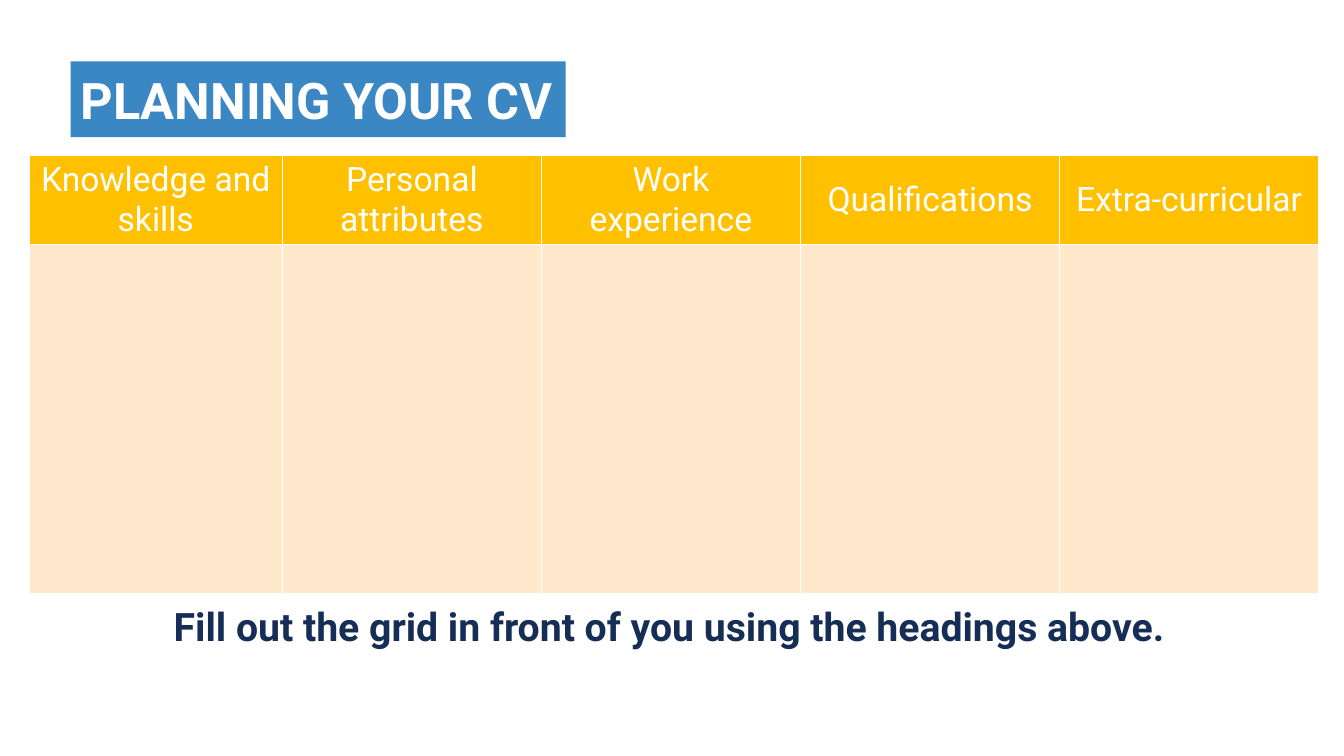
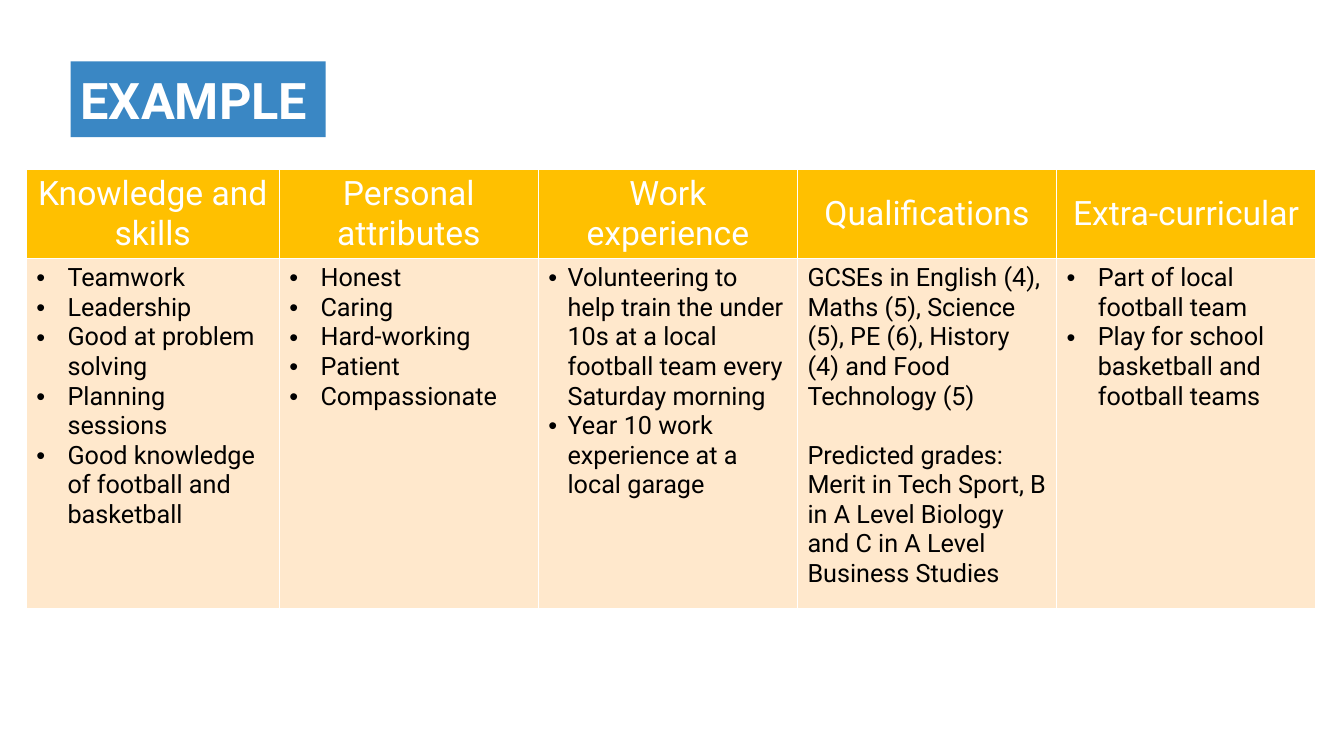
from dataclasses import dataclass

from lxml import etree
from pptx import Presentation
from pptx.dml.color import RGBColor
from pptx.enum.text import MSO_ANCHOR, MSO_AUTO_SIZE, PP_ALIGN
from pptx.oxml.ns import qn
from pptx.util import Inches, Pt

LEFT, CENTER = PP_ALIGN.LEFT, PP_ALIGN.CENTER
TOP, MIDDLE = MSO_ANCHOR.TOP, MSO_ANCHOR.MIDDLE
NO_AUTOFIT = MSO_AUTO_SIZE.NONE
TITLE_ONLY = 5


@dataclass(frozen=True)
class Theme:
    font: str = "Roboto"
    white: str = "FFFFFF"
    black: str = "000000"
    navy: str = "162D56"
    blue: str = "3A87C4"
    amber: str = "FFC000"
    peach: str = "FFE8CC"
    title_size: int = 36
    prompt_size: int = 28
    header_size: int = 24
    body_size: int = 18
    border_width: int = 1


THEME = Theme()
HEADINGS = ["Knowledge and skills", "Personal attributes", "Work experience",
            "Qualifications", "Extra-curricular"]
COLUMN_WIDTHS = [2.51] + [2.57] * 4
ROW_HEIGHTS = [0.87, 3.47]
WIDE_INDENT, NARROW_INDENT = 0.31, 0.19

# Each column: bullet indent in inches (0 for plain paragraphs) and its paragraphs
EXAMPLE_COLUMNS = [
    (WIDE_INDENT, ["Teamwork", "Leadership", "Good at problem solving",
                   "Planning sessions",
                   "Good knowledge of football and basketball"]),
    (WIDE_INDENT, ["Honest", "Caring", "Hard-working", "Patient",
                   "Compassionate"]),
    (NARROW_INDENT, ["Volunteering to help train the under 10s at a local "
                     "football team every Saturday morning",
                     "Year 10 work experience at a local garage"]),
    (0, ["GCSEs in English (4), Maths (5), Science (5), PE (6), History (4) "
         "and Food Technology (5)",
         "Predicted grades: Merit in Tech Sport, B in A Level Biology and "
         "C in A Level Business Studies"]),
    (WIDE_INDENT, ["Part of local football team",
                   "Play for school basketball and football teams"]),
]


def fill_solid(target, color):
    target.fill.solid()
    target.fill.fore_color.rgb = RGBColor.from_string(color)


def format_para(para, size, color, bold=False, align=LEFT):
    para.alignment = align
    for span in para.runs:
        span.font.name = THEME.font
        span.font.size = Pt(size)
        span.font.bold = bold
        span.font.color.rgb = RGBColor.from_string(color)


def add_bullet(para, indent):
    properties = para._p.get_or_add_pPr()
    properties.set("marL", str(Inches(indent)))
    properties.set("indent", str(-Inches(indent)))
    font = etree.SubElement(properties, qn("a:buFont"))
    font.set("typeface", "Arial")
    etree.SubElement(properties, qn("a:buChar")).set("char", "•")


def set_borders(cell):
    properties = cell._tc.get_or_add_tcPr()
    for position, side in enumerate(("lnL", "lnR", "lnT", "lnB")):
        line = etree.Element(qn(f"a:{side}"))
        line.set("w", str(Pt(THEME.border_width)))
        fill = etree.SubElement(line, qn("a:solidFill"))
        etree.SubElement(fill, qn("a:srgbClr")).set("val", THEME.white)
        properties.insert(position, line)


def add_title(page, text, width):
    title = page.shapes.title
    title.left, title.top = Inches(0.7), Inches(0.61)
    title.width, title.height = Inches(width), Inches(0.75)
    fill_solid(title, THEME.blue)
    frame = title.text_frame
    frame.text = text
    frame.auto_size = NO_AUTOFIT
    frame.word_wrap = True
    frame.margin_right = 0
    frame.vertical_anchor = MIDDLE
    format_para(frame.paragraphs[0], THEME.title_size, THEME.white, bold=True)


def fill_body_cell(cell, indent, lines):
    frame = cell.text_frame
    frame.text = "\n".join(lines)
    for index, para in enumerate(frame.paragraphs):
        if indent:
            add_bullet(para, indent)
        elif index:
            para.space_before = Pt(21)
        format_para(para, THEME.body_size, THEME.black)


def add_cv_grid(page, left, top, columns=()):
    """Place the five-column grid; without columns its body stays empty."""
    table = page.shapes.add_table(
        len(ROW_HEIGHTS), len(HEADINGS), Inches(left), Inches(top),
        Inches(sum(COLUMN_WIDTHS)), Inches(sum(ROW_HEIGHTS))).table
    table.horz_banding = False
    for column, width in zip(table.columns, COLUMN_WIDTHS):
        column.width = Inches(width)
    for row, height in zip(table.rows, ROW_HEIGHTS):
        row.height = Inches(height)
    for index, heading in enumerate(HEADINGS):
        header, body = table.cell(0, index), table.cell(1, index)
        for cell, color, anchor in ((header, THEME.amber, MIDDLE),
                                    (body, THEME.peach, TOP)):
            fill_solid(cell, color)
            set_borders(cell)
            cell.vertical_anchor = anchor
        header.text_frame.text = heading
        format_para(header.text_frame.paragraphs[0], THEME.header_size,
                    THEME.white, align=CENTER)
    for index, (indent, lines) in enumerate(columns):
        fill_body_cell(table.cell(1, index), indent, lines)


def add_prompt(page, text, left, top, width, height):
    box = page.shapes.add_textbox(Inches(left), Inches(top),
                                  Inches(width), Inches(height))
    frame = box.text_frame
    frame.word_wrap = True
    frame.text = text
    format_para(frame.paragraphs[0], THEME.prompt_size, THEME.navy,
                bold=True, align=CENTER)


def add_page(deck, title, title_width):
    page = deck.slides.add_slide(deck.slide_layouts[TITLE_ONLY])
    add_title(page, title, title_width)
    return page


def add_planning_page(deck):
    page = add_page(deck, "PLANNING YOUR CV", 4.91)
    add_cv_grid(page, 0.29, 1.54)
    add_prompt(page, "Fill out the grid in front of you using the headings above.",
               1.55, 5.93, 10.17, 0.57)


def add_example_page(deck):
    page = add_page(deck, "EXAMPLE", 2.53)
    add_cv_grid(page, 0.26, 1.68, EXAMPLE_COLUMNS)


def main():
    deck = Presentation()
    deck.slide_width, deck.slide_height = Inches(13.33), Inches(7.5)
    add_planning_page(deck)
    add_example_page(deck)
    deck.save("out.pptx")


if __name__ == "__main__":
    main()
